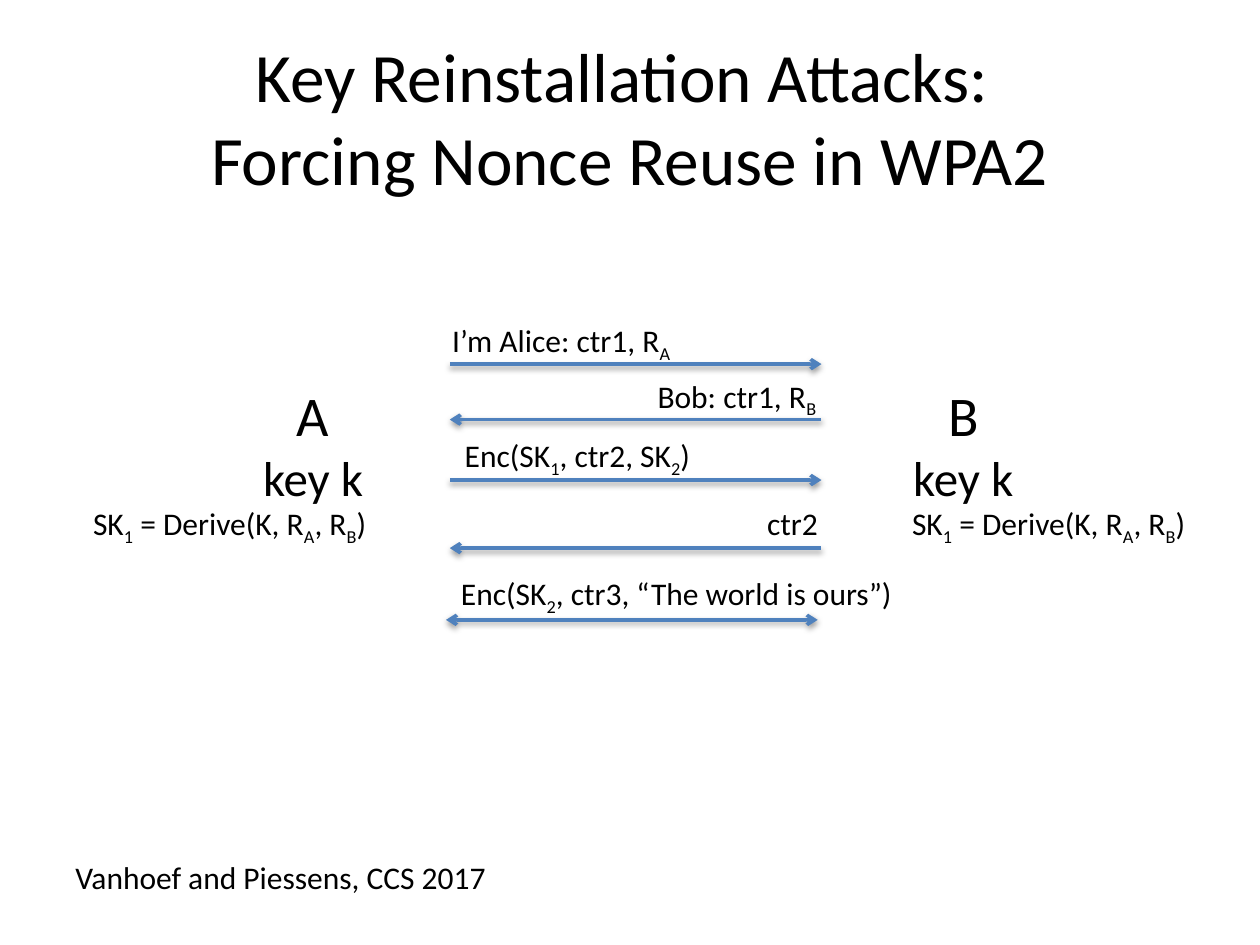
from lxml import etree
from pptx import Presentation
from pptx.dml.color import RGBColor
from pptx.enum.shapes import MSO_CONNECTOR as CONN
from pptx.enum.text import MSO_ANCHOR as ANCHOR, MSO_AUTO_SIZE as AUTO, PP_ALIGN as ALIGN
from pptx.oxml import parse_xml
from pptx.oxml.ns import nsdecls, qn
from pptx.util import Inches, Pt

COLORS = {"text": "000000", "arrow": "4F81BD", "shadow": "000000"}

prs = Presentation()
prs.slide_width, prs.slide_height = Inches(10), Inches(7.5)
U = prs.slide_width / 100
s = prs.slides.add_slide(prs.slide_layouts[5])


def write(sp, text, at, sizes=(18,), align=ALIGN.LEFT, anchor=ANCHOR.TOP, fit=AUTO.SHAPE_TO_FIT_TEXT):
    sp.left, sp.top, sp.width, sp.height = [round(v * U) for v in at]
    tf = sp.text_frame
    tf.word_wrap, tf.auto_size, tf.vertical_anchor = True, fit, anchor
    p = tf.paragraphs[0]
    p.alignment = align
    for i, line in enumerate(text.split("\n")):
        if i:
            p.add_line_break()
        head, *subs = line.split("_")
        parts = [(head, 0)]
        for sub in subs:
            parts += [(sub[0], -25000), (sub[1:], 0)]
        for words, baseline in parts:
            if not words:
                continue
            r = p.add_run()
            r.text = words
            r.font.name = "Calibri"
            r.font.size = Pt(sizes[min(i, len(sizes) - 1)])
            r.font.color.rgb = RGBColor.from_string(COLORS["text"])
            if baseline:
                r.font._element.set("baseline", str(baseline))


def arrow(x, y, ends):
    c = s.shapes.add_connector(CONN.STRAIGHT, *[round(v * U) for v in (x, y, x + 29.5, y)])
    c.line.color.rgb = RGBColor.from_string(COLORS["arrow"])
    c.line.width = Pt(2)
    ln = c.line._get_or_add_ln()
    for end in ends:
        etree.SubElement(ln, qn(f"a:{end}"), type="arrow")
    c._element.spPr.append(parse_xml(
        f'<a:effectLst {nsdecls("a")}><a:outerShdw blurRad="40000" dist="20000" dir="5400000" '
        f'rotWithShape="0"><a:srgbClr val="{COLORS["shadow"]}"><a:alpha val="38000"/>'
        '</a:srgbClr></a:outerShdw></a:effectLst>'))


write(s.shapes.title, "Key Reinstallation Attacks: \nForcing Nonce Reuse in WPA2", (5, 3, 90, 12.5),
      sizes=(39.6,), align=ALIGN.CENTER, anchor=ANCHOR.MIDDLE, fit=AUTO.NONE)

for x, y, ends in [
    (35.7, 28.9, ["tailEnd"]),
    (35.7, 33.3, ["headEnd"]),
    (35.7, 38.1, ["tailEnd"]),
    (35.7, 43.5, ["headEnd"]),
    (35.4, 49.2, ["headEnd", "tailEnd"]),
]:
    arrow(x, y, ends)

for text, x, y, w in [
    ("I’m Alice: ctr1, R_A", 34.9, 25, 21.5),
    ("Bob: ctr1, R_B", 51.2, 29.4, 21.5),
    ("Enc(SK_1, ctr2, SK_2)", 35.9, 34.1, 27.4),
    ("ctr2", 59.9, 39.5, 11.7),
    ("Enc(SK_2, ctr3, “The world is ours”)", 35.6, 45.1, 39.5),
    ("Vanhoef and Piessens, CCS 2017", 5, 67.6, 41.7),
]:
    write(s.shapes.add_textbox(0, 0, 0, 0), text, (x, y, w, 4))

for name, x, key_x in [("A", 18.6, 6.4), ("B", 70.2, 71.4)]:
    write(s.shapes.add_textbox(0, 0, 0, 0), f"{name}\nkey k", (x, 29.7, 12.5, 11.1),
          sizes=(32, 28), align=ALIGN.CENTER)
    write(s.shapes.add_textbox(0, 0, 0, 0), "SK_1 = Derive(K, R_A, R_B)", (key_x, 39.5, 26.9, 4))

prs.save("out.pptx")
